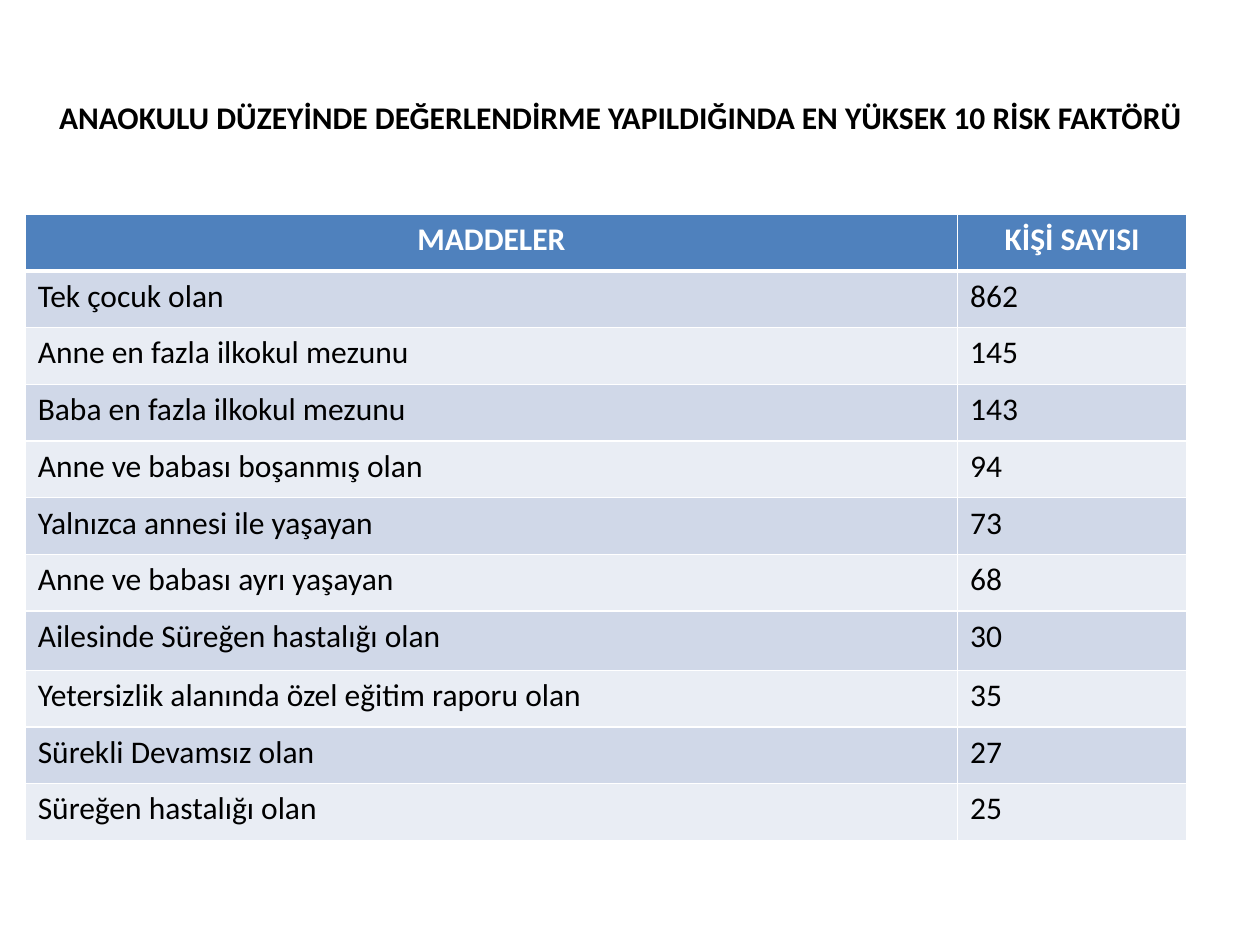
"""Build a slide with a table of the ten highest risk factors at kindergarten level."""
from typing import NamedTuple

from lxml.etree import SubElement
from pptx import Presentation
from pptx.dml.color import RGBColor
from pptx.enum.text import MSO_ANCHOR, PP_ALIGN
from pptx.oxml.ns import qn
from pptx.util import Inches, Pt

BLACK = RGBColor(0x00, 0x00, 0x00)
WHITE = RGBColor(0xFF, 0xFF, 0xFF)
HEADER_BLUE = RGBColor(0x4F, 0x81, 0xBD)
BAND_DARK = RGBColor(0xD0, 0xD8, 0xE8)
BAND_LIGHT = RGBColor(0xE9, 0xED, 0xF4)

TITLE = "ANAOKULU DÜZEYİNDE DEĞERLENDİRME YAPILDIĞINDA EN YÜKSEK 10 RİSK FAKTÖRÜ"
HEADERS = ("MADDELER", "KİŞİ SAYISI")
COLUMN_WIDTHS = (7.4, 1.82)
ROW_HEIGHT = 0.45
TALL_ROW = 7
TALL_ROW_HEIGHT = 0.47


class RiskFactor(NamedTuple):
    name: str
    count: int


RISK_FACTORS = (
    RiskFactor("Tek çocuk olan", 862),
    RiskFactor("Anne en fazla ilkokul mezunu", 145),
    RiskFactor("Baba en fazla ilkokul mezunu", 143),
    RiskFactor("Anne ve babası boşanmış olan", 94),
    RiskFactor("Yalnızca annesi ile yaşayan", 73),
    RiskFactor("Anne ve babası ayrı yaşayan", 68),
    RiskFactor("Ailesinde Süreğen hastalığı olan", 30),
    RiskFactor("Yetersizlik alanında özel eğitim raporu olan", 35),
    RiskFactor("Sürekli Devamsız olan", 27),
    RiskFactor("Süreğen hastalığı olan", 25),
)


def write_text(text_frame, text: str, *, size: float = 18, color: RGBColor = BLACK,
               bold: bool = False, alignment=PP_ALIGN.LEFT) -> None:
    paragraph = text_frame.paragraphs[0]
    paragraph.alignment = alignment
    run = paragraph.add_run()
    run.text = text
    run.font.name = "Calibri"
    run.font.size = Pt(size)
    run.font.bold = bold
    run.font.color.rgb = color


def set_borders(cell, *, top: float = 1, bottom: float = 1) -> None:
    properties = cell._tc.get_or_add_tcPr()
    widths = {"a:lnL": 1, "a:lnR": 1, "a:lnT": top, "a:lnB": bottom}
    for position, (tag, width) in enumerate(widths.items()):
        line = SubElement(properties, qn(tag), w=str(Pt(width)))
        fill = SubElement(line, qn("a:solidFill"))
        SubElement(fill, qn("a:srgbClr"), val=str(WHITE))
        properties.insert(position, line)


def fill_cell(cell, text: str, row: int) -> None:
    is_header = row == 0
    cell.fill.solid()
    if is_header:
        cell.fill.fore_color.rgb = HEADER_BLUE
        write_text(cell.text_frame, text, color=WHITE, bold=True, alignment=PP_ALIGN.CENTER)
    else:
        cell.fill.fore_color.rgb = BAND_DARK if row % 2 else BAND_LIGHT
        write_text(cell.text_frame, text)
    set_borders(cell, top=3 if row == 1 else 1, bottom=3 if is_header else 1)


def add_title(slide) -> None:
    shape = slide.shapes.add_textbox(Inches(0.35), Inches(0.3), Inches(9.15), Inches(1.25))
    text_frame = shape.text_frame
    text_frame.word_wrap = True
    text_frame.vertical_anchor = MSO_ANCHOR.MIDDLE
    text_frame.margin_left = text_frame.margin_right = 0
    write_text(text_frame, TITLE, bold=True, alignment=PP_ALIGN.CENTER)


def add_risk_table(slide) -> None:
    rows = (HEADERS, *RISK_FACTORS)
    heights = [TALL_ROW_HEIGHT if row == TALL_ROW else ROW_HEIGHT for row in range(len(rows))]
    table = slide.shapes.add_table(
        len(rows), len(HEADERS), Inches(0.2), Inches(1.7),
        Inches(sum(COLUMN_WIDTHS)), Inches(sum(heights)),
    ).table
    for column, width in zip(table.columns, COLUMN_WIDTHS):
        column.width = Inches(width)
    for row, (values, height) in enumerate(zip(rows, heights)):
        table.rows[row].height = Inches(height)
        for column, value in enumerate(values):
            fill_cell(table.cell(row, column), str(value), row)


def main() -> None:
    presentation = Presentation()
    presentation.slide_width = Inches(10)
    presentation.slide_height = Inches(7.5)
    slide = presentation.slides.add_slide(presentation.slide_layouts[6])
    add_risk_table(slide)
    add_title(slide)
    presentation.save("out.pptx")


if __name__ == "__main__":
    main()
